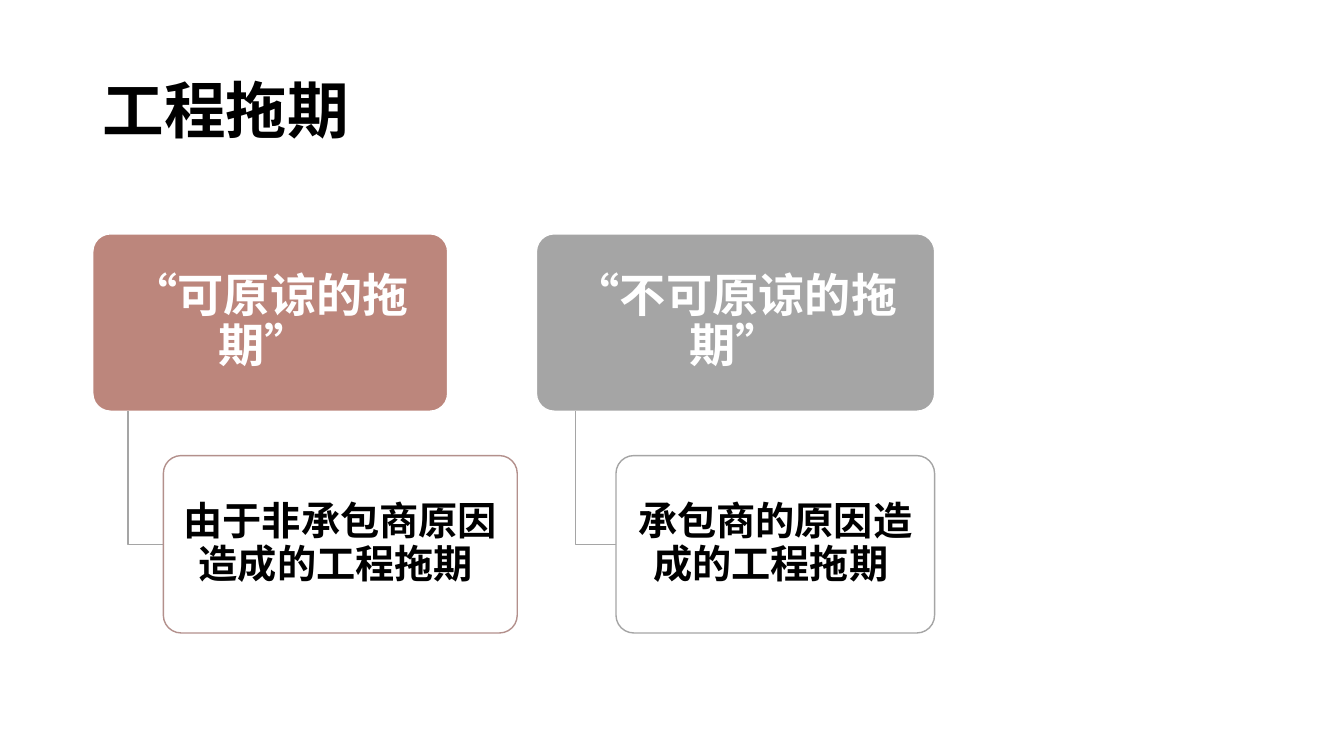
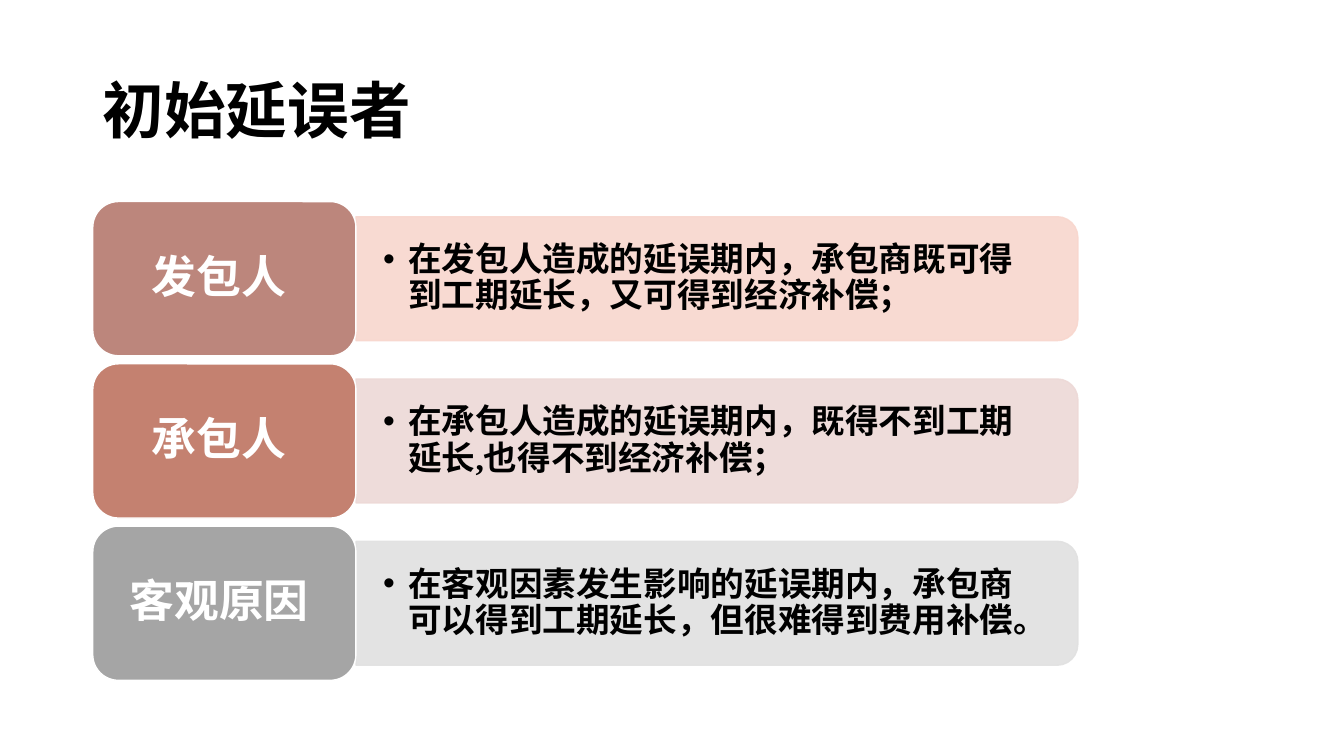
from lxml.etree import SubElement
from pptx import Presentation
from pptx.dml.color import RGBColor
from pptx.enum.lang import MSO_LANGUAGE_ID
from pptx.enum.shapes import MSO_SHAPE
from pptx.enum.text import MSO_ANCHOR, PP_ALIGN
from pptx.oxml.ns import qn
from pptx.util import Pt

PX = 9144  # EMU per px, 100 px to the inch
SLIDE_W, SLIDE_H = 1333, 750
LEFT = 92

BLACK = RGBColor(0x00, 0x00, 0x00)
WHITE = RGBColor(0xFF, 0xFF, 0xFF)
ROSE = RGBColor(0xBC, 0x86, 0x7C)
ROSE_EDGE = RGBColor(0xB3, 0x90, 0x8C)
CLAY = RGBColor(0xC4, 0x81, 0x70)
GRAY = RGBColor(0xA5, 0xA5, 0xA5)
PALE_PEACH = RGBColor(0xF8, 0xD7, 0xCE)
PALE_ROSE = RGBColor(0xED, 0xD9, 0xD7)
PALE_GRAY = RGBColor(0xE1, 0xE1, 0xE1)

FONT = {"name": "Times New Roman", "bold": True,
        "language_id": MSO_LANGUAGE_ID.SIMPLIFIED_CHINESE}


def set_attrs(obj, values):
    for name, value in values.items():
        setattr(obj, name, value)


def write(sp, text, size, color, align=PP_ALIGN.CENTER, pad=(10, 5)):
    """Put one paragraph in a shape; pad is the side and top inset in px."""
    tf = sp.text_frame
    side, top = (v * PX for v in pad)
    set_attrs(tf, {"word_wrap": True, "vertical_anchor": MSO_ANCHOR.MIDDLE,
                   "margin_left": side, "margin_right": side,
                   "margin_top": top, "margin_bottom": top})
    p = tf.paragraphs[0]
    set_attrs(p, {"alignment": align, "line_spacing": 0.9})
    r = p.add_run()
    r.text = text
    set_attrs(r.font, FONT | {"size": Pt(size)})
    r.font.color.rgb = color
    return p


def add_text(s, box, *args, **kwargs):
    sp = s.shapes.add_textbox(*(v * PX for v in box))
    return write(sp, *args, **kwargs)


def add_box(s, kind, box, fill, line, adj=None):
    sp = s.shapes.add_shape(kind, *(round(v * PX) for v in box))
    sp.shadow.inherit = False
    sp.fill.solid()
    sp.fill.fore_color.rgb = fill
    sp.line.color.rgb = line
    sp.line.width = Pt(1)
    if adj is not None:
        sp.adjustments[0] = adj
    return sp


def add_elbow(s, x, top, right, bottom):
    """Draw a line down from (x, top), then across to (right, bottom)."""
    builder = s.shapes.build_freeform(x * PX, top * PX)
    builder.add_line_segments([(x * PX, bottom * PX), (right * PX, bottom * PX)],
                              close=False)
    sp = builder.convert_to_shape()
    sp.shadow.inherit = False
    sp.fill.background()
    sp.line.color.rgb = GRAY
    sp.line.width = Pt(1)


def set_opacity(sp, percent):
    for clr in sp._element.spPr.iter(qn("a:srgbClr")):
        SubElement(clr, qn("a:alpha"), val=str(percent * 1000))


def add_bullet(p, indent):
    pPr = p._p.get_or_add_pPr()
    pPr.set("marL", str(indent * PX))
    pPr.set("indent", str(-indent * PX))
    SubElement(pPr, qn("a:buFont"), typeface="Arial")
    SubElement(pPr, qn("a:buChar"), char="•")


def add_slide(prs, title):
    s = prs.slides.add_slide(prs.slide_layouts[6])
    add_text(s, (LEFT, 40, 1150, 145), title, 44, BLACK, align=PP_ALIGN.LEFT)
    return s


def add_branch(s, left, width, child_width, fill, edge, heading, detail):
    """A filled heading with an outlined box hung below it."""
    top, child_top, height = 232, 452, 176
    child_left = left + width // 5
    sp = add_box(s, MSO_SHAPE.ROUNDED_RECTANGLE, (left, top, width, height),
                 fill, WHITE, adj=0.1)
    write(sp, heading, 33, WHITE, pad=(7, 5))
    add_elbow(s, left + width // 10, top + height,
              child_left, child_top + height // 2)
    sp = add_box(s, MSO_SHAPE.ROUNDED_RECTANGLE,
                 (child_left, child_top, child_width, height),
                 WHITE, edge, adj=0.1)
    write(sp, detail, 28, BLACK, pad=(6, 4))


def add_row(s, top, fill, pale, label, detail):
    """A label block with a pale bar to its right."""
    label_w, label_h, bar_w, bar_h = 261, 153, 716, 123
    bar_left, middle = LEFT + label_w, top + label_h / 2
    # The bar is an upright shape turned a quarter, so its right end is round
    bar = add_box(s, MSO_SHAPE.ROUND_2_SAME_RECTANGLE,
                  (bar_left + (bar_w - bar_h) / 2, middle - bar_w / 2,
                   bar_h, bar_w), pale, pale)
    bar.rotation = 90
    set_opacity(bar, 90)
    p = add_text(s, (bar_left, top + 21, 710, 111), detail, 24, BLACK,
                 align=PP_ALIGN.LEFT, pad=(27, 14))
    add_bullet(p, 25)
    sp = add_box(s, MSO_SHAPE.ROUNDED_RECTANGLE,
                 (LEFT, top, label_w, label_h), fill, WHITE)
    write(sp, label, 32, WHITE, pad=(13, 7))


def main():
    prs = Presentation()
    set_attrs(prs, {"slide_width": SLIDE_W * PX, "slide_height": SLIDE_H * PX})

    # Kinds of delay
    s = add_slide(prs, "工程拖期")
    add_branch(s, LEFT, 352, 351, ROSE, ROSE_EDGE,
               "“可原谅的拖期” ", "由于非承包商原因造成的工程拖期 ")
    add_branch(s, 532, 395, 316, GRAY, GRAY,
               "“不可原谅的拖期”", "承包商的原因造成的工程拖期 ")

    # Who caused the delay first
    s = add_slide(prs, "初始延误者")
    rows = [
        (ROSE, PALE_PEACH, "发包人 ",
         "在发包人造成的延误期内，承包商既可得到工期延长，又可得到经济补偿；"),
        (CLAY, PALE_ROSE, "承包人 ",
         "在承包人造成的延误期内，既得不到工期延长,也得不到经济补偿；"),
        (GRAY, PALE_GRAY, "客观原因 ",
         "在客观因素发生影响的延误期内，承包商可以得到工期延长，但很难得到费用补偿。"),
    ]
    for i, row in enumerate(rows):
        add_row(s, 200 + i * 161, *row)

    prs.save("out.pptx")


if __name__ == "__main__":
    main()
